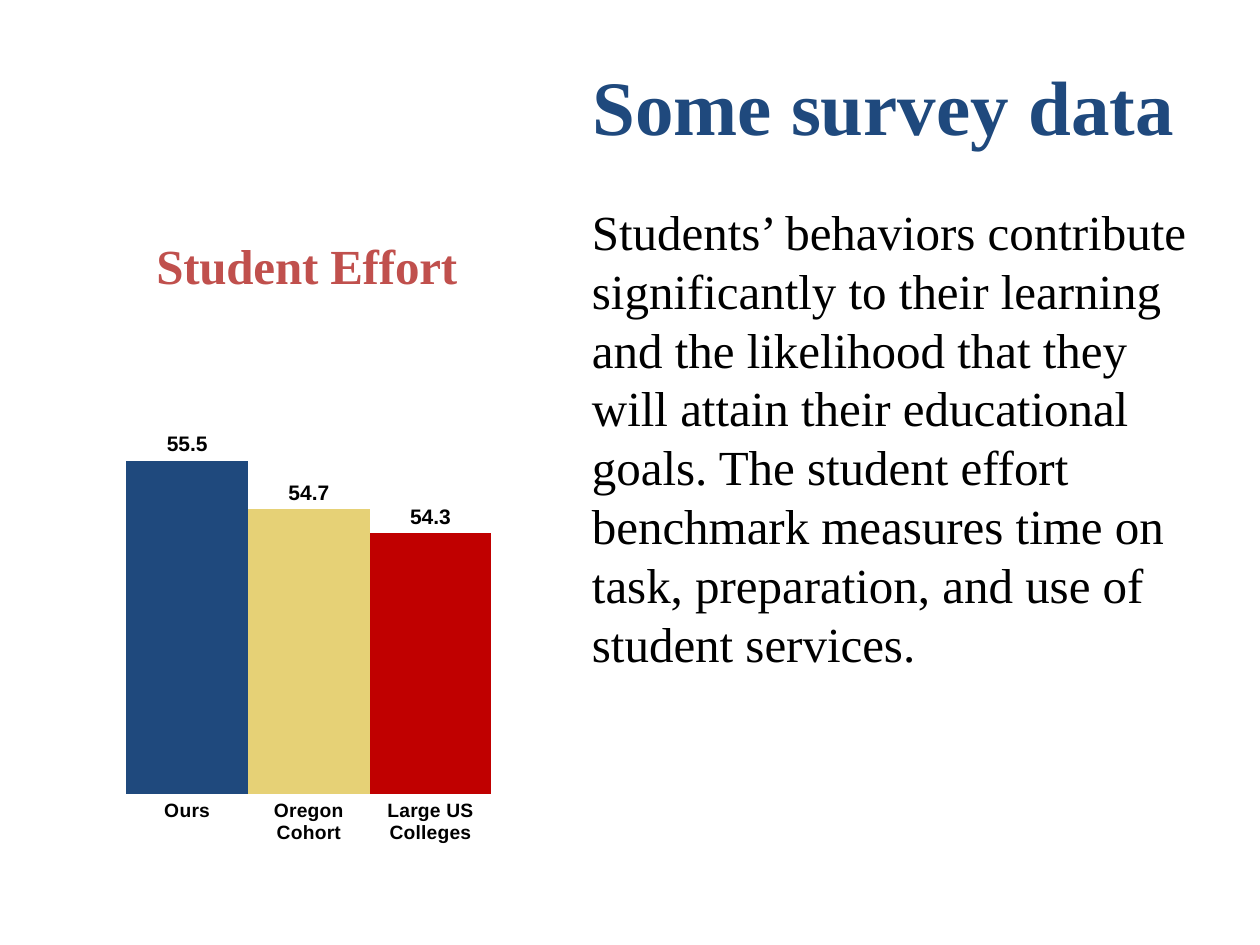
from lxml.etree import SubElement
from pptx import Presentation
from pptx.chart.data import CategoryChartData
from pptx.dml.color import RGBColor
from pptx.enum.chart import XL_CHART_TYPE, XL_LABEL_POSITION, XL_TICK_MARK
from pptx.enum.text import MSO_ANCHOR, PP_ALIGN
from pptx.oxml.ns import qn
from pptx.util import Inches, Pt

NAVY = RGBColor(0x1F, 0x49, 0x7D)
SAND = RGBColor(0xE6, 0xD1, 0x76)
RED = RGBColor(0xC0, 0x00, 0x00)
BRICK = RGBColor(0xC0, 0x50, 0x4D)
BLACK = RGBColor(0x00, 0x00, 0x00)
SERIF = "Times New Roman"
SCORES = [("Ours", 55.5, NAVY), ("Oregon Cohort", 54.7, SAND), ("Large US Colleges", 54.3, RED)]
EXPLANATION = (
    "Students’ behaviors contribute significantly to their learning and the likelihood "
    "that they will attain their educational goals. The student effort benchmark measures "
    "time on task, preparation, and use of student services."
)


def set_font(font, name, size, color, bold=False):
    """Apply a typeface, size, colour and weight."""
    font.name = name
    font.size = Pt(size)
    font.color.rgb = color
    font.bold = bold


def add_text(s, box, text, size, color, bold=False, align=PP_ALIGN.LEFT, anchor=MSO_ANCHOR.TOP):
    """Place one wrapped paragraph in the box."""
    tf = s.shapes.add_textbox(*map(Inches, box)).text_frame
    tf.word_wrap = True
    tf.vertical_anchor = anchor
    p = tf.paragraphs[0]
    p.text = text
    p.alignment = align
    set_font(p.font, SERIF, size, color, bold)


def set_layout(parent, index, **values):
    """Give a chart part a manual layout as fractions of the chart."""
    for old in parent.findall(qn("c:layout")):
        parent.remove(old)
    layout = SubElement(parent, qn("c:layout"))
    parent.insert(index, layout)
    manual = SubElement(layout, qn("c:manualLayout"))
    for tag, value in values.items():
        SubElement(manual, qn(f"c:{tag}")).set("val", str(value))


def add_effort_chart(s, box):
    """Draw the student effort scores as touching columns."""
    data = CategoryChartData(number_format="0.0")
    data.categories = [name for name, _, _ in SCORES]
    data.add_series("Student Effort", [score for _, score, _ in SCORES])
    chart = s.shapes.add_chart(XL_CHART_TYPE.COLUMN_CLUSTERED, *map(Inches, box), data).chart
    set_font(chart.font, "Calibri", 10, BLACK)
    chart.has_legend = False

    title = chart.chart_title
    p = title.text_frame.paragraphs[0]
    r = p.add_run()
    r.text = "Student Effort"
    set_font(r.font, SERIF, 28, BRICK, True)
    title.include_in_layout = False
    set_layout(title._element, 1, xMode="edge", yMode="edge", x=0.15, y=0.17)
    set_layout(chart._chartSpace.chart.plotArea, 0, layoutTarget="inner", xMode="edge",
               yMode="edge", x=0.1, y=0.12, w=0.87, h=0.78)

    value_axis = chart.value_axis
    value_axis.minimum_scale, value_axis.maximum_scale = 50, 60
    value_axis.major_unit = 5
    value_axis.has_major_gridlines = False
    value_axis.visible = False
    category_axis = chart.category_axis
    category_axis.major_tick_mark = XL_TICK_MARK.NONE
    category_axis.format.line.fill.background()
    set_font(category_axis.tick_labels.font, "Arial", 11, BLACK, True)

    plot = chart.plots[0]
    plot.gap_width = 0
    plot.overlap = -25
    plot.vary_by_categories = False
    series = plot.series[0]
    for i, (_, _, color) in enumerate(SCORES):
        fill = series.points[i].format.fill
        fill.solid()
        fill.fore_color.rgb = color
    labels = series.data_labels
    labels.show_value = True
    labels.number_format = "0.0"
    labels.number_format_is_linked = False
    labels.position = XL_LABEL_POSITION.OUTSIDE_END
    set_font(labels.font, "Arial", 12, BLACK, True)


def build_slide(prs):
    """Lay out the heading, the explanation and the chart."""
    s = prs.slides.add_slide(prs.slide_layouts[6])
    add_text(s, (0.92, 0.33, 8.5, 1), "Some survey data", 44, NAVY, True,
             PP_ALIGN.RIGHT, MSO_ANCHOR.MIDDLE)
    add_text(s, (4.6, 1.55, 5, 3.87), EXPLANATION, 28, BLACK)
    add_effort_chart(s, (0.67, 0.75, 3.33, 6.17))


def main():
    """Create and save the presentation."""
    prs = Presentation()
    prs.slide_width, prs.slide_height = Inches(10), Inches(7.5)
    build_slide(prs)
    prs.save("out.pptx")


if __name__ == "__main__":
    main()
